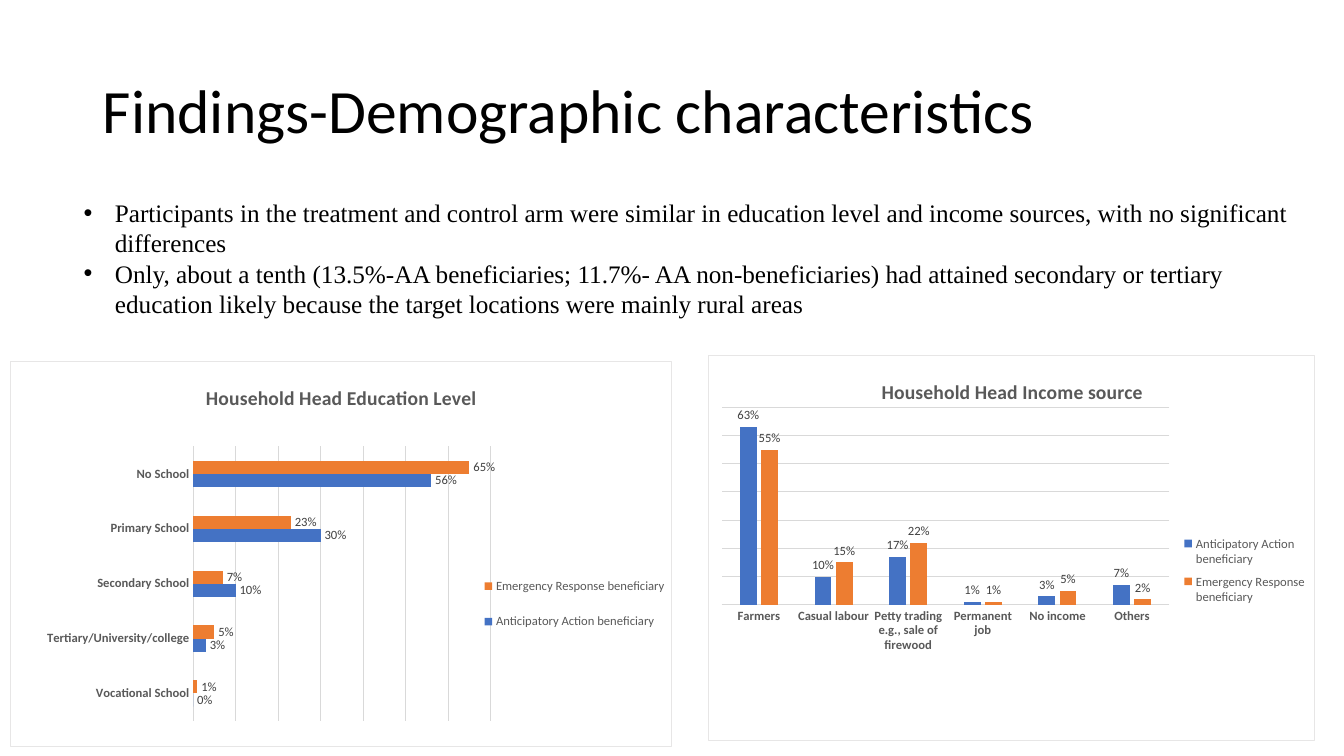
from dataclasses import dataclass

from lxml import etree
from pptx import Presentation
from pptx import util as u
from pptx.chart.chart import Chart
from pptx.chart.data import CategoryChartData
from pptx.dml.color import RGBColor
from pptx.enum import chart as kinds, text
from pptx.oxml import parse_xml
from pptx.oxml.ns import nsdecls, qn

SANS = "Calibri"
SERIF = "Times New Roman"
GREY = "595959"
GRID = "D9D9D9"
SERIES = {
    "Anticipatory Action beneficiary": "4472C4",
    "Emergency Response beneficiary": "ED7D31",
}
FINDINGS = [
    "Participants in the treatment and control arm were similar in education level "
    "and income sources, with no significant differences",
    "Only, about a tenth (13.5%-AA beneficiaries; 11.7%- AA non-beneficiaries) had "
    "attained secondary or tertiary education likely because the target locations "
    "were mainly rural areas",
]
Box = tuple[float, float, float, float]


@dataclass
class Survey:
    title: str
    kind: kinds.XL_CHART_TYPE
    box: Box
    plot: Box
    legend: Box
    title_at: tuple[float, float]
    overlap: int
    categories: list[str]
    values: list[list[float]]


SURVEYS = [
    Survey(
        "Household Head Income source", kinds.XL_CHART_TYPE.COLUMN_CLUSTERED,
        (7.02, 3.52, 6.02, 3.83), (0.022, 0.135, 0.739, 0.513),
        (0.78, 0.45, 0.21, 0.22), (0.28, 0.05), -27,
        ["Farmers", "Casual labour", "Petty trading e.g., sale of firewood",
         "Permanent job", "No income", "Others"],
        [[0.63, 0.1, 0.17, 0.01, 0.03, 0.07], [0.55, 0.15, 0.22, 0.01, 0.05, 0.02]],
    ),
    Survey(
        "Household Head Education Level", kinds.XL_CHART_TYPE.BAR_CLUSTERED,
        (0.1, 3.58, 6.57, 3.83), (0.276, 0.221, 0.45, 0.713),
        (0.715, 0.51, 0.275, 0.24), (0.29, 0.05), 0,
        ["Vocational School", "Tertiary/University/college", "Secondary School",
         "Primary School", "No School"],
        [[0, 0.03, 0.1, 0.3, 0.56], [0.01, 0.05, 0.07, 0.23, 0.65]],
    ),
]


def colour(value: str) -> RGBColor:
    return RGBColor.from_string(value)


def style(font, size: float, shade: str, face: str = SANS, bold: bool = False) -> None:
    font.size = u.Pt(size)
    font.name = face
    font.bold = bold
    font.color.rgb = colour(shade)


def move(shape, box: Box) -> None:
    shape.left, shape.top, shape.width, shape.height = map(u.Inches, box)


def place(part: etree._Element, position: tuple[float, ...], inner: bool = False) -> None:
    for old in part.findall(qn("c:layout")):
        part.remove(old)
    target = '<c:layoutTarget val="inner"/>' if inner else ""
    modes = '<c:xMode val="edge"/><c:yMode val="edge"/>'
    sizes = "".join(f'<c:{name} val="{value}"/>' for name, value in zip("xywh", position))
    layout = parse_xml(
        f'<c:layout {nsdecls("c")}><c:manualLayout>{target}{modes}{sizes}'
        "</c:manualLayout></c:layout>"
    )
    overlay = part.find(qn("c:overlay"))
    if overlay is None:
        part.insert(0, layout)
    else:
        overlay.addprevious(layout)


def frame(chart: Chart) -> None:
    space = chart.element
    for old in space.findall(qn("c:roundedCorners")):
        space.remove(old)
    corners = parse_xml(f'<c:roundedCorners {nsdecls("c")} val="0"/>')
    date = space.find(qn("c:date1904"))
    if date is None:
        space.insert(0, corners)
    else:
        date.addnext(corners)
    space.find(qn("c:chart")).addnext(parse_xml(
        f'<c:spPr {nsdecls("c", "a")}><a:solidFill><a:srgbClr val="FFFFFF"/></a:solidFill>'
        '<a:ln w="9525"><a:solidFill><a:srgbClr val="E7E6E6"/></a:solidFill></a:ln></c:spPr>'
    ))


def format_axes(chart: Chart) -> None:
    categories, values = chart.category_axis, chart.value_axis
    categories.major_tick_mark = kinds.XL_TICK_MARK.NONE
    categories.has_major_gridlines = False
    style(categories.tick_labels.font, 9, GREY, bold=True)
    values.visible = False
    values.minimum_scale, values.maximum_scale, values.major_unit = 0, 0.7, 0.1
    values.has_major_gridlines = True
    for line in (categories.format.line, values.major_gridlines.format.line):
        line.color.rgb = colour(GRID)
        line.width = u.Pt(0.75)


def format_bars(chart: Chart, overlap: int) -> None:
    plot = chart.plots[0]
    plot.gap_width, plot.overlap, plot.vary_by_categories = 219, overlap, False
    for series, fill in zip(plot.series, SERIES.values()):
        series.format.fill.solid()
        series.format.fill.fore_color.rgb = colour(fill)
        labels = series.data_labels
        labels.show_value = True
        labels.number_format, labels.number_format_is_linked = "0%", False
        labels.position = kinds.XL_LABEL_POSITION.OUTSIDE_END
        style(labels.font, 9, "404040")


def add_survey(slide, survey: Survey) -> None:
    data = CategoryChartData(number_format="0%")
    data.categories = survey.categories
    for name, values in zip(SERIES, survey.values):
        data.add_series(name, values)
    chart = slide.shapes.add_chart(survey.kind, *map(u.Inches, survey.box), data).chart
    style(chart.font, 10, "000000")
    chart.has_title = True
    heading = chart.chart_title.text_frame
    heading.text = survey.title
    style(heading.paragraphs[0].font, 14, GREY, bold=True)
    chart.has_legend = True
    chart.legend.position = kinds.XL_LEGEND_POSITION.RIGHT
    chart.legend.include_in_layout = False
    style(chart.legend.font, 9, GREY)
    format_axes(chart)
    format_bars(chart, survey.overlap)
    root = chart.element.find(qn("c:chart"))
    place(root.find(qn("c:title")), survey.title_at)
    place(root.find(qn("c:legend")), survey.legend)
    place(root.find(qn("c:plotArea")), survey.plot, inner=True)
    frame(chart)


def add_title(slide) -> None:
    title = slide.shapes.title
    move(title, (0.92, 0.4, 11.5, 1.45))
    title.text_frame.text = "Findings-Demographic characteristics"
    title.text_frame.vertical_anchor = text.MSO_ANCHOR.MIDDLE
    para = title.text_frame.paragraphs[0]
    para.alignment = text.PP_ALIGN.LEFT
    para.line_spacing = 0.9
    style(para.font, 44, "000000")


def add_findings(slide) -> None:
    body = slide.placeholders[1]
    move(body, (0.73, 1.91, 12.31, 1.62))
    box = body.text_frame
    box.text = "\n".join(FINDINGS)
    box.auto_size = text.MSO_AUTO_SIZE.NONE
    box.vertical_anchor = text.MSO_ANCHOR.TOP
    for para in box.paragraphs:
        para.space_before = u.Pt(0)
        style(para.font, 18, "000000", SERIF)
        properties = para._p.get_or_add_pPr()
        properties.set("marL", str(u.Inches(0.31)))
        properties.set("indent", str(-u.Inches(0.31)))


def main() -> None:
    deck = Presentation()
    deck.slide_width, deck.slide_height = u.Inches(13.33), u.Inches(7.5)
    page = deck.slides.add_slide(deck.slide_layouts[1])
    add_title(page)
    add_findings(page)
    for survey in SURVEYS:
        add_survey(page, survey)
    deck.save("out.pptx")


if __name__ == "__main__":
    main()
